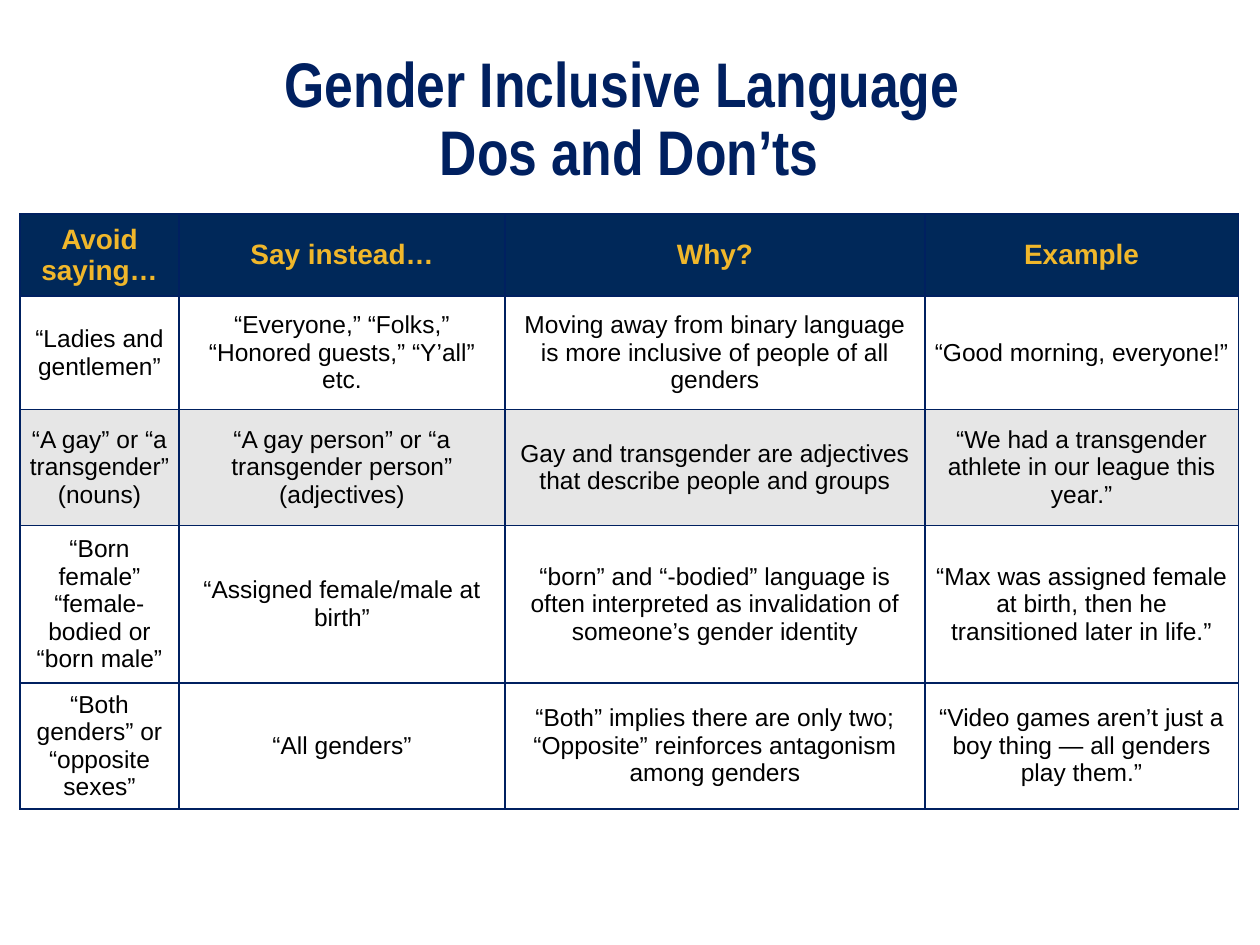
from dataclasses import dataclass

from pptx import Presentation
from pptx.dml.color import RGBColor
from pptx.enum.text import MSO_ANCHOR, MSO_AUTO_SIZE, PP_ALIGN
from pptx.oxml.ns import qn
from pptx.slide import Slide
from pptx.table import _Cell
from pptx.text.text import TextFrame
from pptx.util import Inches, Pt
from lxml import etree

MIDDLE = MSO_ANCHOR.MIDDLE
CENTER = PP_ALIGN.CENTER
TITLE_ONLY = 5


@dataclass(frozen=True)
class TextStyle:
    font: str
    size: int
    color: str
    bold: bool


@dataclass(frozen=True)
class CellStyle:
    text: TextStyle
    fill: str | None
    margin_y: float


@dataclass(frozen=True)
class Theme:
    title: TextStyle = TextStyle("Arial Narrow", 36, "002060", True)
    header: TextStyle = TextStyle("Arial", 16, "F0B72B", True)
    body: TextStyle = TextStyle("Arial", 14, "000000", False)
    header_fill: str = "002859"
    shaded_fill: str = "E6E6E6"
    border: str = "002060"
    border_width: int = 1
    cell_margin_x: float = 0.07


@dataclass(frozen=True)
class Row:
    height: float
    style: CellStyle
    texts: tuple[str, str, str, str]


THEME = Theme()
HEADER = CellStyle(THEME.header, THEME.header_fill, 0.04)
PLAIN = CellStyle(THEME.body, None, 0)
SHADED = CellStyle(THEME.body, THEME.shaded_fill, 0)

COLUMN_WIDTHS = (1.26, 2.59, 3.33, 2.49)
ROWS = (
    Row(0.65, HEADER, ("Avoid saying…", "Say instead…", "Why?", "Example")),
    Row(0.9, PLAIN, (
        "“Ladies and gentlemen”",
        "“Everyone,” “Folks,” “Honored guests,” “Y’all” etc.",
        "Moving away from binary language is more inclusive of people of all genders",
        "“Good morning, everyone!”",
    )),
    Row(0.92, SHADED, (
        "“A gay” or “a transgender” \n(nouns)",
        "“A gay person” or “a transgender person” (adjectives)",
        "Gay and transgender are adjectives that describe people and groups",
        "“We had a transgender athlete in our league this year.”",
    )),
    Row(1.25, PLAIN, (
        "“Born female” “female-bodied or “born male”",
        "“Assigned female/male at birth”",
        "“born” and “-bodied” language is often interpreted as invalidation "
        "of someone’s gender identity",
        "“Max was assigned female at birth, then he transitioned later in life.”",
    )),
    Row(1, PLAIN, (
        "“Both genders” or “opposite sexes”",
        "“All genders”",
        "“Both” implies there are only two; “Opposite” reinforces antagonism among genders",
        "“Video games aren’t just a boy thing — all genders play them.”",
    )),
)


def format_text(frame: TextFrame, style: TextStyle) -> None:
    for para in frame.paragraphs:
        para.alignment = CENTER
        for span in para.runs:
            span.font.name = style.font
            span.font.size = Pt(style.size)
            span.font.bold = style.bold
            span.font.color.rgb = RGBColor.from_string(style.color)


def add_borders(cell: _Cell) -> None:
    """Outline all four sides; call before the fill, which must follow in the XML."""
    properties = cell._tc.get_or_add_tcPr()
    for side in ("lnL", "lnR", "lnT", "lnB"):
        line = etree.SubElement(properties, qn(f"a:{side}"), w=str(Pt(THEME.border_width)))
        fill = etree.SubElement(line, qn("a:solidFill"))
        etree.SubElement(fill, qn("a:srgbClr"), val=THEME.border)


def fill_cell(cell: _Cell, text: str, style: CellStyle) -> None:
    cell.text_frame.text = text
    format_text(cell.text_frame, style.text)
    cell.vertical_anchor = MIDDLE
    cell.margin_left = cell.margin_right = Inches(THEME.cell_margin_x)
    cell.margin_top = cell.margin_bottom = Inches(style.margin_y)
    add_borders(cell)
    if style.fill is None:
        cell.fill.background()
    else:
        cell.fill.solid()
        cell.fill.fore_color.rgb = RGBColor.from_string(style.fill)


def add_title(page: Slide) -> None:
    title = page.shapes.title
    title.left, title.top = Inches(-0.27), Inches(0.25)
    title.width, title.height = Inches(10.53), Inches(1.42)
    frame = title.text_frame
    frame.text = "Gender Inclusive Language \vDos and Don’ts"
    frame.word_wrap = True
    frame.auto_size = MSO_AUTO_SIZE.NONE
    frame.vertical_anchor = MIDDLE
    frame.paragraphs[0].line_spacing = 0.9
    format_text(frame, THEME.title)


def add_language_table(page: Slide) -> None:
    table = page.shapes.add_table(
        len(ROWS), len(COLUMN_WIDTHS), Inches(0.16), Inches(1.7),
        Inches(sum(COLUMN_WIDTHS)), Inches(sum(row.height for row in ROWS)),
    ).table
    table.horz_banding = False
    for column, width in zip(table.columns, COLUMN_WIDTHS):
        column.width = Inches(width)
    for table_row, row in zip(table.rows, ROWS):
        table_row.height = Inches(row.height)
        for cell, text in zip(table_row.cells, row.texts):
            fill_cell(cell, text, row.style)


def main() -> None:
    deck = Presentation()
    deck.slide_width, deck.slide_height = Inches(10), Inches(7.5)
    page = deck.slides.add_slide(deck.slide_layouts[TITLE_ONLY])
    add_title(page)
    add_language_table(page)
    deck.save("out.pptx")


if __name__ == "__main__":
    main()
